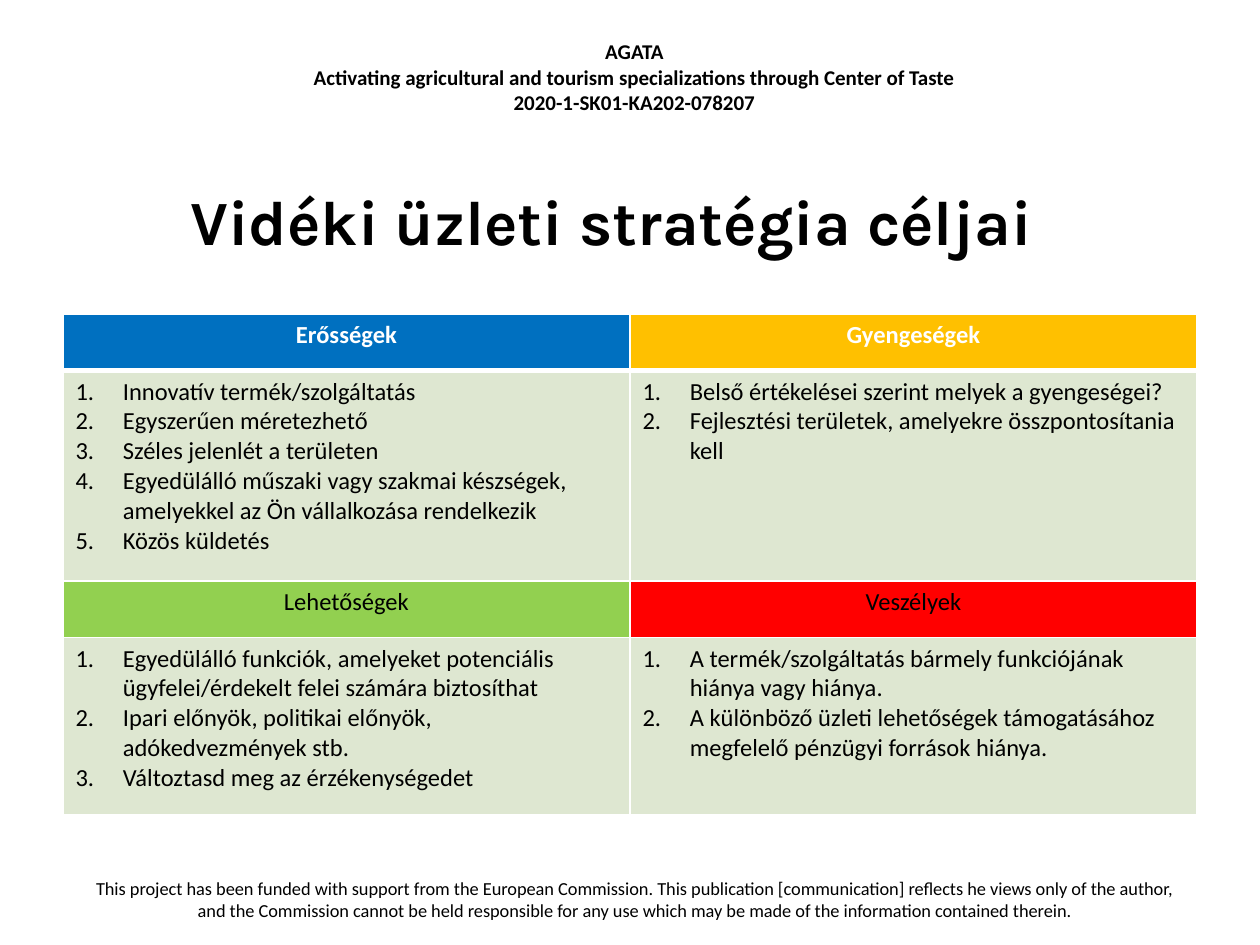
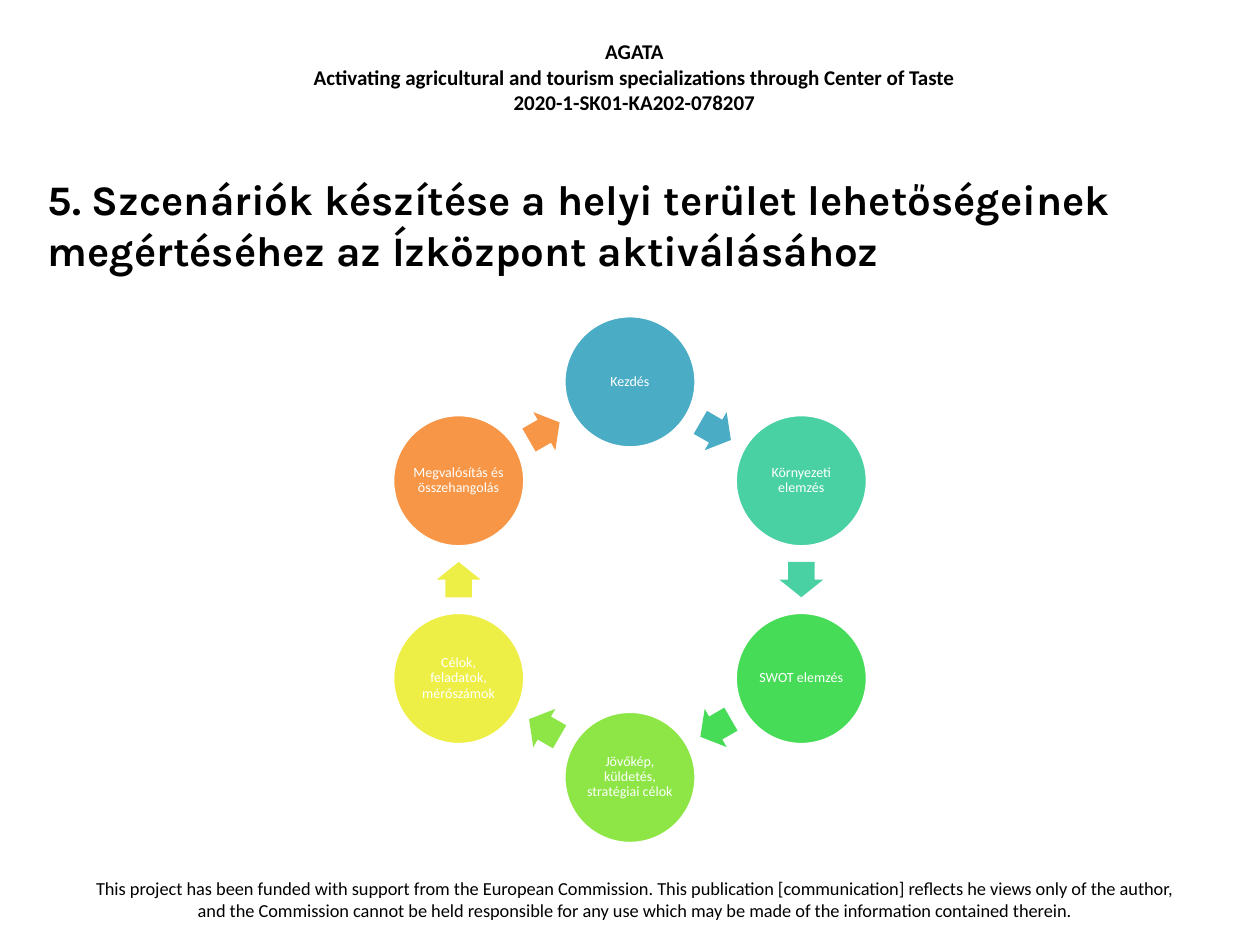
from dataclasses import dataclass
from math import cos, radians, sin

from lxml import etree
from pptx import Presentation
from pptx.dml.color import RGBColor
from pptx.enum.shapes import MSO_SHAPE
from pptx.enum.text import MSO_ANCHOR, MSO_AUTO_SIZE, PP_ALIGN
from pptx.oxml.ns import qn
from pptx.util import Inches, Pt

CENTER, LEFT = PP_ALIGN.CENTER, PP_ALIGN.LEFT
MIDDLE = MSO_ANCHOR.MIDDLE
NO_AUTOFIT = MSO_AUTO_SIZE.NONE
ELLIPSE, RIGHT_ARROW = MSO_SHAPE.OVAL, MSO_SHAPE.RIGHT_ARROW
TITLE_ONLY = 5

BODY_FONT, TITLE_FONT = "Calibri", "Karla"
COLORS = {
    "black": "000000", "white": "FFFFFF", "cell": "DEE7D1",
    "strengths": "0070C0", "weaknesses": "FFC000",
    "opportunities": "92D050", "threats": "FF0000",
    "start": "4BACC6", "environment": "49D1A3", "swot": "47DC57",
    "vision": "8DE646", "goals": "EEEF46", "implementation": "F79646",
}

PROJECT_LINES = [
    "AGATA",
    "Activating agricultural and tourism specializations through Center of Taste",
    "2020-1-SK01-KA202-078207",
]
FUNDING_NOTE = (
    "This project has been funded with support from the European Commission. "
    "This publication [communication] reflects he views only of the author, "
    "and the Commission cannot be held responsible for any use which may be made "
    "of the information contained therein."
)


@dataclass
class Box:
    left: float
    top: float
    width: float
    height: float

    def lengths(self) -> list:
        return [Inches(v) for v in (self.left, self.top, self.width, self.height)]


@dataclass
class Quadrant:
    heading: str
    color: str
    points: list[str]


@dataclass
class Step:
    label: str
    color: str


HEADER_BOX = Box(2.08, 0.26, 5.91, 0.71)
FOOTER_BOX = Box(0.54, 6.91, 9, 0.47)

SWOT = [
    [
        Quadrant("Erősségek", "strengths", [
            "Innovatív termék/szolgáltatás",
            "Egyszerűen méretezhető",
            "Széles jelenlét a területen",
            "Egyedülálló műszaki vagy szakmai készségek, "
            "amelyekkel az Ön vállalkozása rendelkezik",
            "Közös küldetés",
        ]),
        Quadrant("Gyengeségek", "weaknesses", [
            "Belső értékelései szerint melyek a gyengeségei?",
            "Fejlesztési területek, amelyekre összpontosítania kell",
        ]),
    ],
    [
        Quadrant("Lehetőségek", "opportunities", [
            "Egyedülálló funkciók, amelyeket potenciális "
            "ügyfelei/érdekelt felei számára biztosíthat",
            "Ipari előnyök, politikai előnyök, adókedvezmények stb.",
            "Változtasd meg az érzékenységedet",
        ]),
        Quadrant("Veszélyek", "threats", [
            "A termék/szolgáltatás bármely funkciójának hiánya vagy hiánya.",
            "A különböző üzleti lehetőségek támogatásához "
            "megfelelő pénzügyi források hiánya.",
        ]),
    ],
]
ROW_HEIGHTS = [0.45, 1.67, 0.45, 1.41]

STEPS = [
    Step("Kezdés", "start"),
    Step("Környezeti elemzés", "environment"),
    Step("SWOT elemzés", "swot"),
    Step("Jövőkép, küldetés, stratégiai célok", "vision"),
    Step("Célok, feladatok, mérőszámok", "goals"),
    Step("Megvalósítás és összehangolás", "implementation"),
]
RING_X, RING_Y, RING_RADIUS = 5.0, 4.6, 1.57
STEP_SIZE = 1.05
ARROW_WIDTH, ARROW_HEIGHT = 0.28, 0.35


def rgb(name: str) -> RGBColor:
    return RGBColor.from_string(COLORS[name])


def write(frame, lines: list[str], size: float, color: str = "black", bold: bool = False,
          align=CENTER, font: str = BODY_FONT, numbered: bool = False) -> None:
    frame.text = "\n".join(lines)
    frame.word_wrap = True
    for paragraph in frame.paragraphs:
        if numbered:
            number_paragraph(paragraph)
        paragraph.alignment = align
        paragraph.font.name = font
        paragraph.font.size = Pt(size)
        paragraph.font.bold = bold
        paragraph.font.color.rgb = rgb(color)


def number_paragraph(paragraph) -> None:
    properties = paragraph._p.get_or_add_pPr()
    properties.set("marL", str(Inches(0.375)))
    properties.set("indent", str(Inches(-0.375)))
    etree.SubElement(properties, qn("a:buFont"), typeface="+mj-lt")
    etree.SubElement(properties, qn("a:buAutoNum"), type="arabicPeriod")


def add_project_slide(prs, title: str, box: Box, size: float, align):
    """Add a slide with its title and the shared project header and footer."""
    slide = prs.slides.add_slide(prs.slide_layouts[TITLE_ONLY])
    for area, lines, text_size, bold in (
        (HEADER_BOX, PROJECT_LINES, 12, True),
        (FOOTER_BOX, [FUNDING_NOTE], 10.5, False),
    ):
        note = slide.shapes.add_textbox(*area.lengths())
        write(note.text_frame, lines, text_size, bold=bold)
    heading = slide.shapes.title
    heading.left, heading.top, heading.width, heading.height = box.lengths()
    frame = heading.text_frame
    frame.auto_size = NO_AUTOFIT
    frame.vertical_anchor = MIDDLE
    write(frame, [title], size, bold=True, align=align, font=TITLE_FONT)
    return slide


def set_borders(cell, bottom: float, top: float) -> None:
    properties = cell._tc.get_or_add_tcPr()
    widths = {"a:lnL": 1, "a:lnR": 1, "a:lnT": top, "a:lnB": bottom}
    for position, (tag, width) in enumerate(widths.items()):
        line = etree.Element(qn(tag), w=str(Pt(width)))
        fill = etree.SubElement(line, qn("a:solidFill"))
        etree.SubElement(fill, qn("a:srgbClr"), val=COLORS["white"])
        properties.insert(position, line)


def fill_cell(cell, color: str, bottom: float = 1, top: float = 1) -> None:
    cell.fill.solid()
    cell.fill.fore_color.rgb = rgb(color)
    set_borders(cell, bottom, top)


def add_swot_table(slide) -> None:
    area = Box(0.5, 2.49, 9, sum(ROW_HEIGHTS))
    table = slide.shapes.add_table(len(ROW_HEIGHTS), 2, *area.lengths()).table
    table.horz_banding = False
    for row, height in zip(table.rows, ROW_HEIGHTS):
        row.height = Inches(height)
    for band, quadrants in enumerate(SWOT):
        is_first = band == 0
        rule = 3 if is_first else 1
        for column, quadrant in enumerate(quadrants):
            heading = table.cell(2 * band, column)
            write(heading.text_frame, [quadrant.heading], 14,
                  "white" if is_first else "black", bold=is_first)
            fill_cell(heading, quadrant.color, bottom=rule)
            points = table.cell(2 * band + 1, column)
            write(points.text_frame, quadrant.points, 14, align=LEFT, numbered=True)
            fill_cell(points, "cell", top=rule)


def add_filled_shape(slide, kind, x: float, y: float, width: float, height: float, color: str):
    """Add a preset shape centred on x, y."""
    box = Box(x - width / 2, y - height / 2, width, height)
    shape = slide.shapes.add_shape(kind, *box.lengths())
    shape.shadow.inherit = False
    shape.fill.solid()
    shape.fill.fore_color.rgb = rgb(color)
    shape.line.fill.background()
    return shape


def ring_point(angle: float, radius: float) -> tuple[float, float]:
    """Point on the ring, with the angle in degrees clockwise from the top."""
    return RING_X + radius * sin(radians(angle)), RING_Y - radius * cos(radians(angle))


def add_step_cycle(slide) -> None:
    turn = 360 / len(STEPS)
    for index, step in enumerate(STEPS):
        angle = index * turn
        circle = add_filled_shape(slide, ELLIPSE, *ring_point(angle, RING_RADIUS),
                                  STEP_SIZE, STEP_SIZE, step.color)
        circle.line.color.rgb = rgb("white")
        circle.line.width = Pt(2)
        frame = circle.text_frame
        frame.margin_left = frame.margin_right = Inches(0.01)
        frame.margin_top = frame.margin_bottom = Inches(0.01)
        frame.vertical_anchor = MIDDLE
        write(frame, [step.label], 8, "white")
        frame.paragraphs[0].line_spacing = 0.9

        halfway = angle + turn / 2
        arrow = add_filled_shape(
            slide, RIGHT_ARROW, *ring_point(halfway, RING_RADIUS * cos(radians(turn / 2))),
            ARROW_WIDTH, ARROW_HEIGHT, step.color)
        arrow.rotation = halfway
        arrow.adjustments[0] = 0.6
        arrow.adjustments[1] = 0.5


def main() -> None:
    prs = Presentation()
    prs.slide_width, prs.slide_height = Inches(10), Inches(7.5)

    goals = add_project_slide(prs, "Vidéki üzleti stratégia céljai",
                              Box(0.35, 1.31, 9, 0.87), 36, CENTER)
    add_swot_table(goals)

    scenarios = add_project_slide(
        prs,
        "5. Szcenáriók készítése a helyi terület lehetőségeinek "
        "megértéséhez az Ízközpont aktiválásához",
        Box(0.28, 1.41, 9.45, 0.74), 24, LEFT)
    add_step_cycle(scenarios)

    prs.save("out.pptx")


if __name__ == "__main__":
    main()
